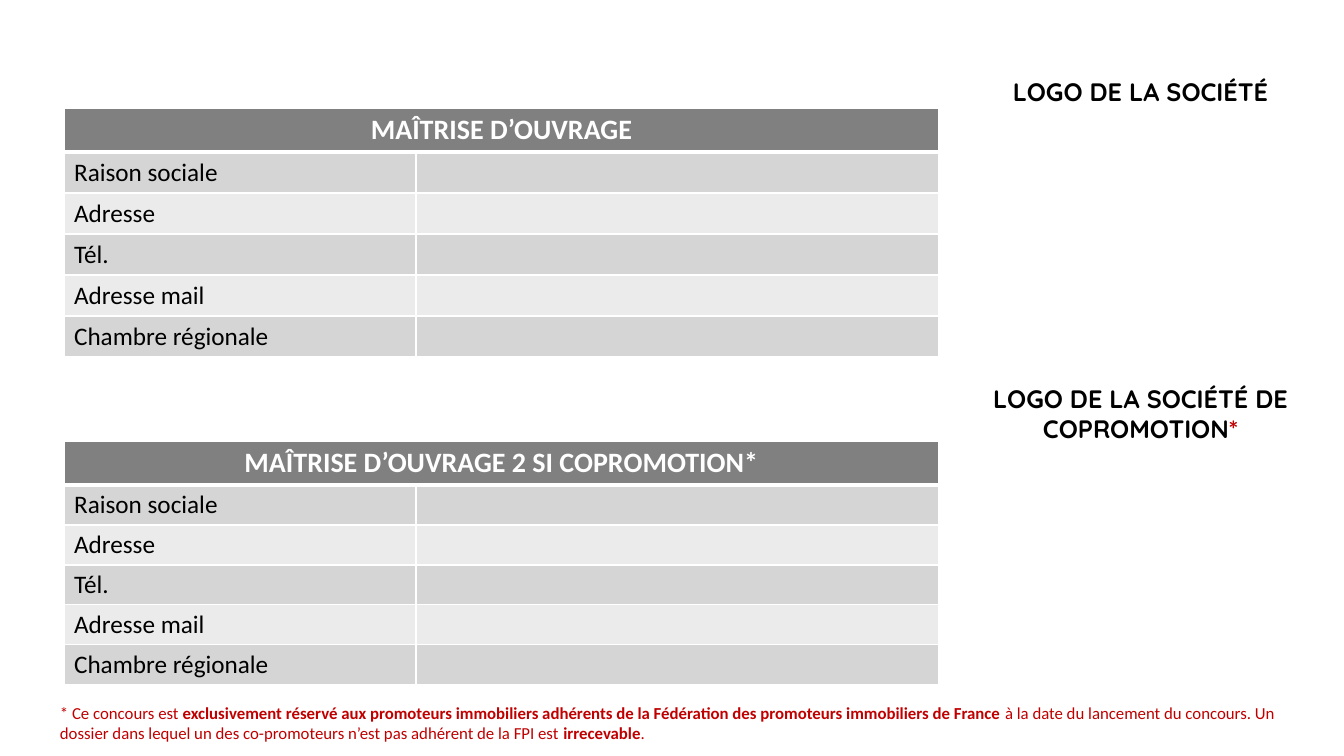
import pptx
import pptx.dml.color
import pptx.enum.text
import pptx.oxml
import pptx.oxml.ns
import pptx.util

PX = 9071
COLORS = {"header": "808080", "odd": "D5D5D5", "even": "EBEBEB",
          "white": "FFFFFF", "black": "000000", "red": "C00000"}
FIELDS = ["Raison sociale", "Adresse", "Tél.", "Adresse mail", "Chambre régionale"]
TABLES = [
    {"title": "MAÎTRISE D’OUVRAGE", "top": 108, "row": 41},
    {"title": "MAÎTRISE D’OUVRAGE 2 SI COPROMOTION*", "top": 441, "row": 40},
]
TABLE_LEFT, COLUMNS, HEADER_HEIGHT = 64, [352, 523], 44
CENTER = pptx.enum.text.PP_ALIGN.CENTER
LEFT = pptx.enum.text.PP_ALIGN.LEFT
HEADER = {"name": "Calibri", "size": 20, "bold": True, "color": "white"}
FIELD = {"name": "Calibri", "size": 18, "bold": False, "color": "black"}
LOGO = {"name": "Quicksand", "size": 18, "bold": True, "color": "black"}
NOTE = {"name": "Calibri", "size": 12, "bold": False, "color": "red"}
STRONG = {**NOTE, "bold": True}
BOXES = [
    ((972, 71, 337, 40), CENTER, [("LOGO DE LA SOCIÉTÉ", LOGO)]),
    ((972, 378, 337, 72), CENTER, [
        ("LOGO DE LA SOCIÉTÉ DE COPROMOTION", LOGO),
        ("*", {**LOGO, "color": "red"})]),
    ((50, 698, 1277, 50), LEFT, [
        ("* Ce concours est ", NOTE),
        ("exclusivement réservé aux promoteurs immobiliers adhérents de la "
         "Fédération des promoteurs immobiliers de France ", STRONG),
        ("à la date du lancement du concours. Un dossier dans lequel un des "
         "co-promoteurs n’est pas adhérent de la FPI est ", NOTE),
        ("irrecevable", STRONG),
        (".", NOTE)]),
]


def px(length):
    return pptx.util.Emu(length * PX)


def rgb(name):
    return pptx.dml.color.RGBColor.from_string(COLORS[name])


def style_font(font, style):
    values = {**style, "size": pptx.util.Pt(style["size"])}
    color = values.pop("color")
    for key, value in values.items():
        setattr(font, key, value)
    font.color.rgb = rgb(color)


def write(para, spans, align):
    para.alignment = align
    for text, style in spans:
        span = para.add_run()
        span.text = text
        style_font(span.font, style)


def style_cell(cell, fill, bottom):
    properties = cell._tc.get_or_add_tcPr()
    for side, width in (("L", 1), ("R", 1), ("T", 1), ("B", bottom)):
        properties.append(pptx.oxml.parse_xml(
            f'<a:ln{side} {pptx.oxml.ns.nsdecls("a")} w="{width * 12700}">'
            f'<a:solidFill><a:srgbClr val="{COLORS["white"]}"/></a:solidFill></a:ln{side}>'))
    cell.fill.solid()
    cell.fill.fore_color.rgb = rgb(fill)
    cell.vertical_anchor = pptx.enum.text.MSO_ANCHOR.MIDDLE
    cell.margin_top = cell.margin_bottom = px(4)


def add_form(page, title, top, row):
    heights = [HEADER_HEIGHT] + [row] * len(FIELDS)
    table = page.shapes.add_table(
        len(heights), len(COLUMNS), px(TABLE_LEFT), px(top),
        px(sum(COLUMNS)), px(sum(heights))).table
    for column, width in zip(table.columns, COLUMNS):
        column.width = px(width)
    for index, height in enumerate(heights):
        table.rows[index].height = px(height)
        fill = "header" if index == 0 else ("even", "odd")[index % 2]
        for cell in table.rows[index].cells:
            style_cell(cell, fill, 1 if index else 3)
            style_font(cell.text_frame.paragraphs[0].font, FIELD)
    table.cell(0, 0).merge(table.cell(0, 1))
    write(table.cell(0, 0).text_frame.paragraphs[0], [(title, HEADER)], CENTER)
    for index, field in enumerate(FIELDS, 1):
        write(table.cell(index, 0).text_frame.paragraphs[0], [(field, FIELD)], LEFT)


def main():
    deck = pptx.Presentation()
    deck.slide_width, deck.slide_height = px(1344), px(756)
    page = deck.slides.add_slide(deck.slide_layouts[6])
    for form in TABLES:
        add_form(page, **form)
    for place, align, spans in BOXES:
        box = page.shapes.add_textbox(*map(px, place))
        box.text_frame.word_wrap = True
        write(box.text_frame.paragraphs[0], spans, align)
    deck.save("out.pptx")


if __name__ == "__main__":
    main()
